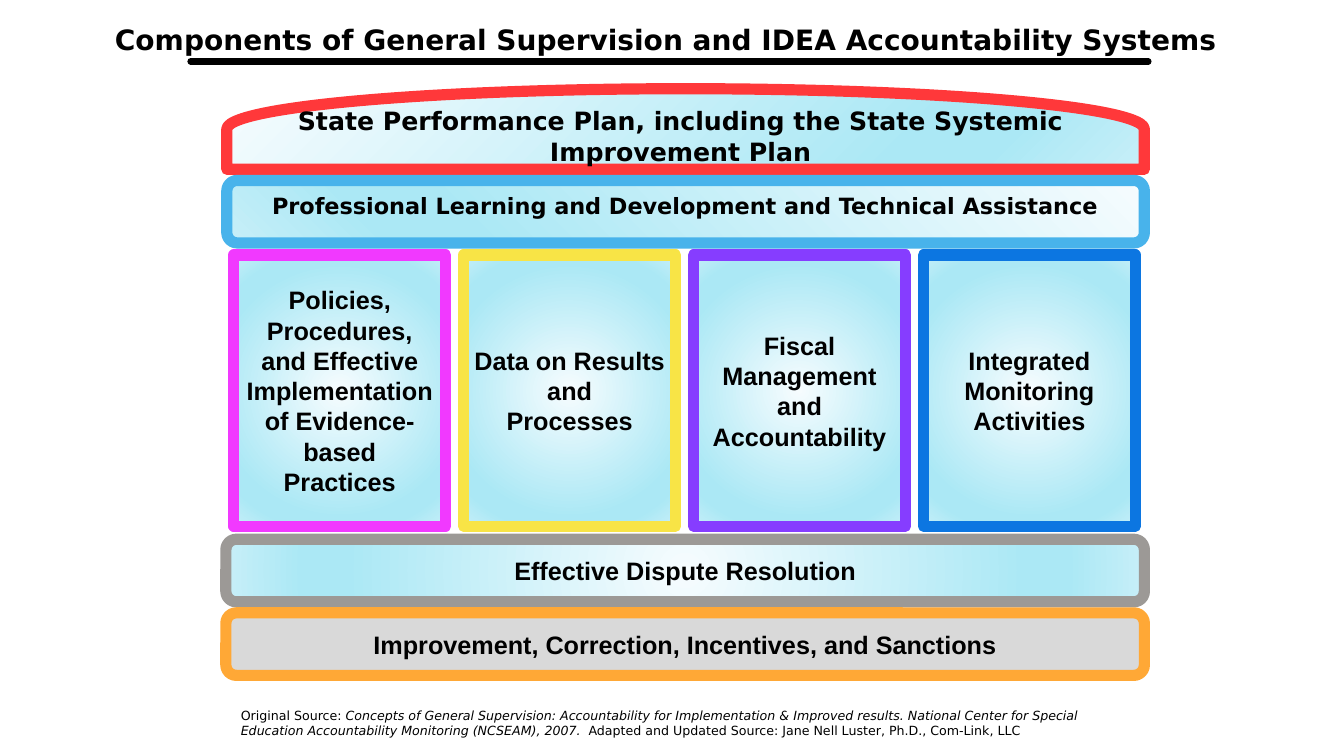
import pptx
import pptx.util
import pptx.oxml
import pptx.oxml.ns
import pptx.dml.color
import pptx.enum.shapes
import pptx.enum.text

COLORS = {
    "black": "000000", "pink": "F139FF", "yellow": "F8E446", "purple": "863DFF",
    "blue": "0C76E1", "gray": "9C9996", "orange": "FFA836", "red": "FF383A",
    "sky": "48B3EB", "silver": "D9D9D9",
    "ice": "F6FCFE", "aqua": "ABE8F5", "mist": "C7EFF8",
}
STOPS = [(0, "ice"), (74, "aqua"), (83, "aqua"), (100, "mist")]
RADIAL = '<a:path path="circle"><a:fillToRect l="50000" t="50000" r="50000" b="50000"/></a:path>'
LINEAR = '<a:lin ang="8100000" scaled="1"/>'
NAMESPACE = pptx.oxml.ns.nsdecls("a")
SHAPES = pptx.enum.shapes.MSO_SHAPE
CENTER = pptx.enum.text.PP_ALIGN.CENTER
LEFT = pptx.enum.text.PP_ALIGN.LEFT

presentation = pptx.Presentation()
presentation.slide_width = pptx.util.Inches(13.33)
presentation.slide_height = pptx.util.Inches(7.5)
slide = presentation.slides.add_slide(presentation.slide_layouts[6])


def add_panel(kind, box, border, shading):
    shape = slide.shapes.add_shape(kind, *map(pptx.util.Inches, box))
    shape.shadow.inherit = False
    shape.line.color.rgb = pptx.dml.color.RGBColor.from_string(COLORS[border])
    shape.line.width = pptx.util.Pt(8)
    shape.line._get_or_add_ln().append(pptx.oxml.parse_xml(f"<a:round {NAMESPACE}/>"))
    if shading in COLORS:
        shape.fill.solid()
        shape.fill.fore_color.rgb = pptx.dml.color.RGBColor.from_string(COLORS[shading])
    else:
        shape.fill.background()
        stops = "".join(
            f'<a:gs pos="{share * 1000}"><a:srgbClr val="{COLORS[name]}"/></a:gs>'
            for share, name in STOPS)
        gradient = pptx.oxml.parse_xml(
            f'<a:gradFill {NAMESPACE} rotWithShape="1"><a:gsLst>{stops}</a:gsLst>{shading}</a:gradFill>')
        properties = shape._element.spPr
        properties.replace(properties.find(pptx.oxml.ns.qn("a:noFill")), gradient)
    return shape


def write_text(shape, paragraphs, size, font, bold=True, align=CENTER):
    frame = shape.text_frame
    frame.word_wrap = True
    for index, runs in enumerate(paragraphs):
        paragraph = frame.paragraphs[0] if index == 0 else frame.add_paragraph()
        paragraph.alignment = align
        for text, italic in runs:
            run = paragraph.add_run()
            run.text = text
            run.font.name = font
            run.font.size = pptx.util.Pt(size)
            run.font.bold = bold
            run.font.italic = italic
            run.font.color.rgb = pptx.dml.color.RGBColor.from_string(COLORS["black"])


pillars = [
    ("pink", ["Policies, Procedures, and Effective Implementation of Evidence-based Practices"]),
    ("yellow", ["Data on Results", "and", "Processes"]),
    ("purple", ["Fiscal Management and Accountability"]),
    ("blue", ["Integrated Monitoring Activities"]),
]
pillar_left, pillar_pitch = 2.32, 2.28
for column, (border, lines) in enumerate(pillars):
    pillar = add_panel(SHAPES.RECTANGLE,
                       (pillar_left + column * pillar_pitch, 2.53, 2.1, 2.69), border, RADIAL)
    write_text(pillar, [[(line, False)] for line in lines], 18, "Arial")

base_top, base_pitch = 5.35, 0.73
bases = [
    ("gray", RADIAL, "Effective Dispute Resolution"),
    ("orange", "silver", "Improvement, Correction, Incentives, and Sanctions"),
]
for row, (border, shading, text) in enumerate(bases):
    base = add_panel(SHAPES.ROUNDED_RECTANGLE,
                     (2.24, base_top + row * base_pitch, 9.11, 0.62), border, shading)
    write_text(base, [[(text, False)]], 18, "Arial")

roof = add_panel(SHAPES.FLOWCHART_DELAY, (6.4, -3.27, 0.8, 9.1), "red", LINEAR)
roof.rotation = 270
add_panel(SHAPES.ROUNDED_RECTANGLE, (2.25, 1.79, 9.1, 0.62), "sky", LINEAR)

captions = [
    ((2, 1, 9.5, 0.4), 18, True, CENTER,
     [("State Performance Plan, including the State Systemic Improvement Plan", False)]),
    ((2.29, 1.86, 9.01, 0.37), 16, True, CENTER,
     [("Professional Learning and Development and Technical Assistance", False)]),
    ((2.29, 6.97, 9.1, 0.4), 9, False, LEFT,
     [("Original Source: ", False),
      ("Concepts of General Supervision: Accountability for Implementation & Improved results. "
       "National Center for Special Education Accountability Monitoring (NCSEAM), 2007.  ", True),
      ("Adapted and Updated Source: Jane Nell Luster, Ph.D., Com-Link, LLC", False)]),
    ((0.63, 0.17, 11.95, 0.44), 20, True, CENTER,
     [("Components of General Supervision and IDEA Accountability Systems", False)]),
]
for box, size, bold, align, runs in captions:
    caption = slide.shapes.add_textbox(*map(pptx.util.Inches, box))
    caption.text_frame.auto_size = pptx.enum.text.MSO_AUTO_SIZE.SHAPE_TO_FIT_TEXT
    write_text(caption, [runs], size, "DejaVu Sans", bold, align)

underline = slide.shapes.add_connector(
    pptx.enum.shapes.MSO_CONNECTOR.STRAIGHT, *map(pptx.util.Inches, (1.89, 0.61, 11.39, 0.61)))
underline.line.color.rgb = pptx.dml.color.RGBColor.from_string(COLORS["black"])
underline.line.width = pptx.util.Pt(4.5)
underline.line._get_or_add_ln().set("cap", "rnd")
underline._element.spPr.append(pptx.oxml.parse_xml(f"<a:effectLst {NAMESPACE}/>"))

presentation.save("out.pptx")
